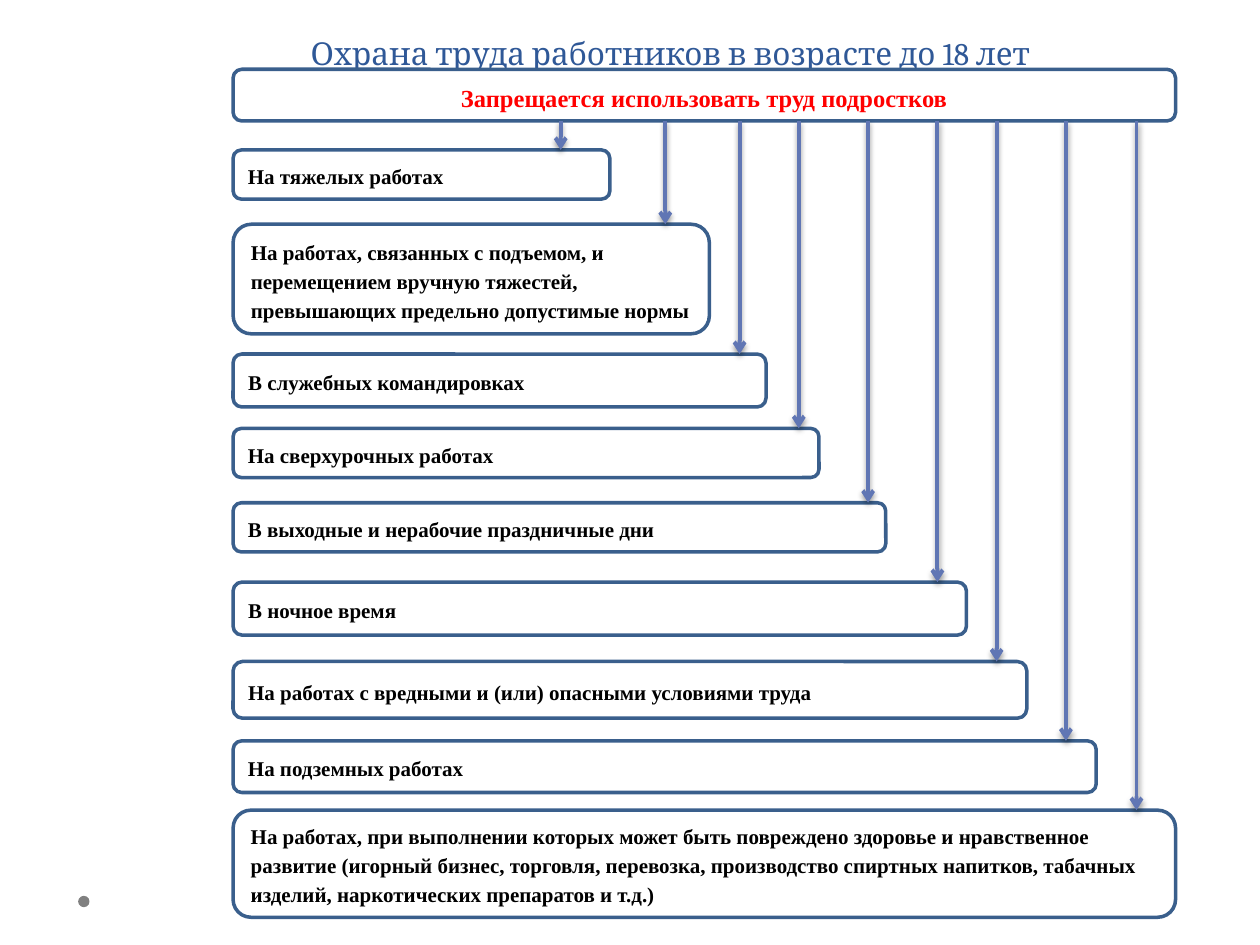
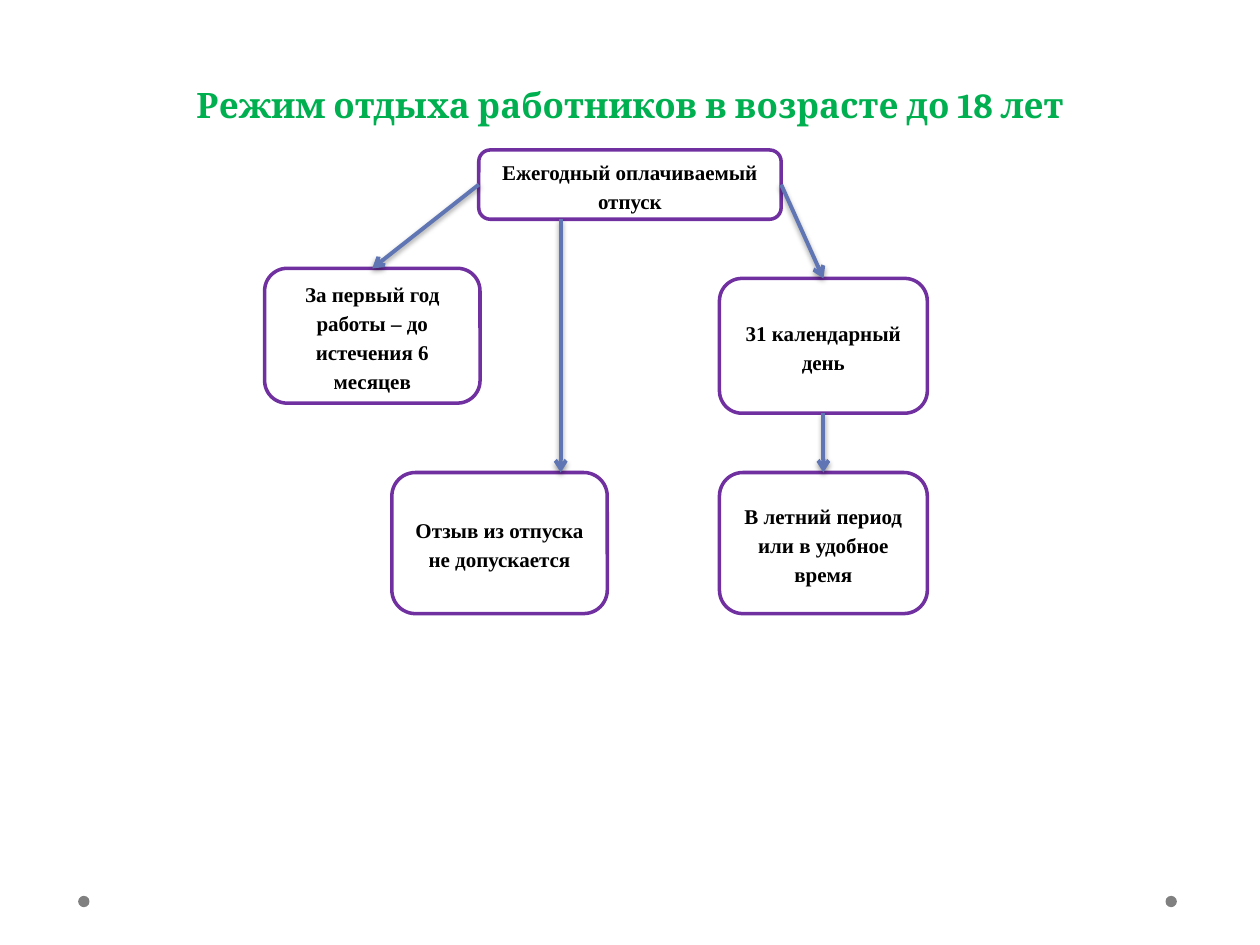
"""Build two slides on labour protection and rest for workers under 18."""
from lxml.etree import fromstring
from pptx import Presentation
from pptx.dml.color import RGBColor
from pptx.enum.shapes import MSO_CONNECTOR as LINE, MSO_SHAPE as SHAPE
from pptx.enum.text import MSO_ANCHOR as ANCHOR, MSO_AUTO_SIZE as FIT, PP_ALIGN as ALIGN
from pptx.oxml.ns import nsdecls
from pptx.util import Inches, Pt

WHITE = RGBColor(0xFF, 0xFF, 0xFF)
BLACK = RGBColor(0, 0, 0)
GREY = RGBColor(0x80, 0x80, 0x80)
RED = RGBColor(0xFF, 0, 0)
NAVY = RGBColor(0x2F, 0x58, 0x97)
STEEL = RGBColor(0x3A, 0x5F, 0x8C)
BLUE = RGBColor(0x60, 0x76, 0xB4)
GREEN = RGBColor(0, 0xB0, 0x50)
PURPLE = RGBColor(0x70, 0x30, 0xA0)
ARROW = f'<a:tailEnd {nsdecls("a")} type="arrow"/>'
SHADE = (f'<a:effectLst {nsdecls("a")}><a:outerShdw blurRad="39370" dist="20320" '
         'dir="5400000" rotWithShape="0"><a:srgbClr val="000000">'
         '<a:alpha val="38000"/></a:srgbClr></a:outerShdw></a:effectLst>')


def write(shape, text, size=12, font="Times New Roman", color=BLACK, bold=True,
          align=ALIGN.CENTER, anchor=ANCHOR.MIDDLE, space=1.15, after=10):
    """Fill a shape with one formatted paragraph."""
    frame = shape.text_frame
    frame.text = text
    frame.word_wrap = True
    frame.auto_size = FIT.NONE
    frame.vertical_anchor = anchor
    para = frame.paragraphs[0]
    para.alignment = align
    para.line_spacing = space
    para.space_before = Pt(0)
    para.space_after = Pt(after)
    face = para.font
    face.name, face.size, face.bold = font, Pt(size), bold
    face.color.rgb = color


def draw(slide, kind, place, fill=None, line=None):
    """Add a flat shape with an optional fill and outline."""
    shape = slide.shapes.add_shape(kind, *map(Inches, place))
    shape.shadow.inherit = False
    if fill is None:
        shape.fill.background()
    else:
        shape.fill.solid()
        shape.fill.fore_color.rgb = fill
    if line is None:
        shape.line.fill.background()
    else:
        shape.line.color.rgb = line
        shape.line.width = Pt(2)
    return shape


deck = Presentation()
deck.slide_width, deck.slide_height = Inches(10), Inches(7.5)

heads = [
    ("Охрана труда работников в возрасте до 18 лет", (1.14, -0.11, 8.36, 0.55),
     dict(size=18, color=NAVY, bold=False, anchor=ANCHOR.MIDDLE), [0.62]),
    ("Режим отдыха работников в возрасте до 18 лет", (0.5, 0.14, 9, 1.02),
     dict(size=20, color=GREEN, bold=True, anchor=ANCHOR.TOP), [0.62, 9.25]),
]
slides = []
for text, place, style, dots in heads:
    slide = deck.slides.add_slide(deck.slide_layouts[5])
    title = slide.shapes.title
    title.left, title.top, title.width, title.height = map(Inches, place)
    write(title, text, font="Cambria", space=Pt(58), after=0, **style)
    for x in dots:
        draw(slide, SHAPE.OVAL, (x, 7.11, 0.09, 0.09), fill=GREY)
    slides.append(slide)
bans, rest = slides

LEFT, BASE = 1.85, 0.96
head = draw(bans, SHAPE.ROUNDED_RECTANGLE, (LEFT, 0.55, 7.48, 0.41), WHITE, STEEL)
write(head, "Запрещается использовать труд подростков", size=14, color=RED)
works = [
    (1.19, 2.99, 0.39, 4.45, "На тяжелых работах"),
    (1.78, 3.78, 0.87, 5.28, "На работах, связанных с подъемом, и перемещением вручную "
     "тяжестей, превышающих предельно допустимые нормы"),
    (2.81, 4.23, 0.42, 5.87, "В служебных командировках"),
    (3.4, 4.65, 0.39, 6.34, "На сверхурочных работах"),
    (3.99, 5.18, 0.39, 6.89, "В выходные и нерабочие праздничные дни"),
    (4.62, 5.82, 0.42, 7.44, "В ночное время"),
    (5.25, 6.3, 0.45, 7.91, "На работах с вредными и (или) опасными условиями труда"),
    (5.88, 6.85, 0.41, 8.46, "На подземных работах"),
    (6.43, 7.48, 0.85, 9.02, "На работах, при выполнении которых может быть повреждено "
     "здоровье и нравственное развитие (игорный бизнес, торговля, перевозка, "
     "производство спиртных напитков, табачных изделий, наркотических препаратов и т.д.)"),
]
arrows = []
for top, width, height, x, text in works:
    box = draw(bans, SHAPE.ROUNDED_RECTANGLE, (LEFT, top, width, height), WHITE, STEEL)
    write(box, text, align=ALIGN.LEFT)
    arrows.append((bans, (x, BASE, x, top), None, None))

leave = [
    ((3.8, 1.19, 2.4, 0.55), "Ежегодный оплачиваемый отпуск"),
    ((2.1, 2.13, 1.71, 1.07), "За первый год работы – до истечения 6 месяцев"),
    ((3.11, 3.75, 1.71, 1.12), "Отзыв из отпуска не допускается"),
    ((5.71, 2.21, 1.65, 1.07), "31 календарный день"),
    ((5.71, 3.75, 1.65, 1.12), "В летний период или в удобное время"),
]
boxes = []
for place, text in leave:
    box = draw(rest, SHAPE.ROUNDED_RECTANGLE, place, line=PURPLE)
    write(box, text)
    boxes.append(box)
paid, first, recall, days, summer = boxes

arrows += [
    (rest, (3.8, 1.47, 2.95, 2.13), (paid, 1), (first, 0)),
    (rest, (6.2, 1.47, 6.54, 2.21), (paid, 3), (days, 0)),
    (rest, (4.45, 1.74, 4.45, 3.75), None, None),
    (rest, (6.54, 3.28, 6.54, 3.75), (days, 2), (summer, 0)),
]
for slide, ends, start, stop in arrows:
    link = slide.shapes.add_connector(LINE.STRAIGHT, *map(Inches, ends))
    if start:
        link.begin_connect(*start)
        link.end_connect(*stop)
    link.line.color.rgb = BLUE
    link.line.width = Pt(2.25)
    link.line._get_or_add_ln().append(fromstring(ARROW))
    link._element.spPr.append(fromstring(SHADE))

deck.save("out.pptx")
